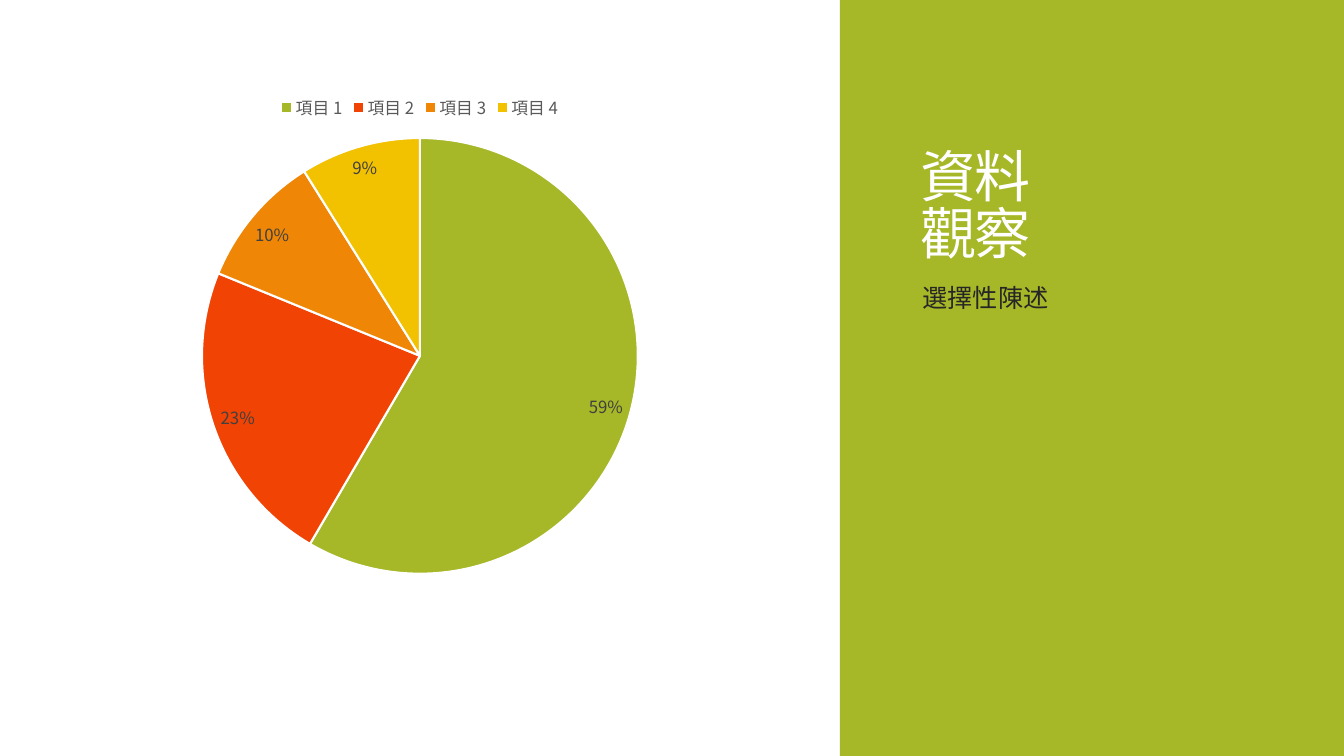
"""Build a slide with a pie chart beside a green title panel."""
from dataclasses import dataclass

from lxml.etree import Element
from pptx import Presentation
from pptx.chart.data import CategoryChartData
from pptx.dml.color import RGBColor
from pptx.enum.chart import XL_CHART_TYPE, XL_LABEL_POSITION, XL_LEGEND_POSITION
from pptx.enum.shapes import MSO_SHAPE
from pptx.enum.text import MSO_ANCHOR
from pptx.oxml.ns import qn
from pptx.slide import Slide
from pptx.text.text import Font
from pptx.util import Inches, Pt


@dataclass(frozen=True)
class Theme:
    """Colours, font and type sizes of the slide."""
    font: str = "Noto Sans CJK TC"
    panel: str = "A6B727"
    white: str = "FFFFFF"
    body: str = "262626"
    legend: str = "595959"
    label: str = "404040"
    title_size: float = 40
    body_size: float = 18
    chart_size: float = 12


@dataclass(frozen=True)
class Box:
    """A frame in inches."""
    left: float
    top: float
    width: float
    height: float

    def lengths(self) -> tuple[Inches, Inches, Inches, Inches]:
        """Return the frame as slide lengths."""
        return Inches(self.left), Inches(self.top), Inches(self.width), Inches(self.height)


@dataclass(frozen=True)
class TextBlock:
    """A text frame with one paragraph."""
    text: str
    box: Box
    size: float
    color: str
    anchor: MSO_ANCHOR
    line_spacing: float = 1.0
    space_before: float = 0
    tracking: int = 0


@dataclass(frozen=True)
class Slice:
    """One slice of the pie."""
    name: str
    share: int
    color: str


THEME = Theme()
PANEL = Box(8.33, 0, 5, 7.5)
CHART = Box(0.83, 0.83, 6.67, 5)
TEXTS = (
    TextBlock("資料\v觀察", Box(9.03, 0.59, 3.7, 2.1), THEME.title_size, THEME.white,
              MSO_ANCHOR.BOTTOM, line_spacing=0.85, tracking=-120),
    TextBlock("選擇性陳述", Box(9.05, 2.75, 3.72, 3.42), THEME.body_size, THEME.body,
              MSO_ANCHOR.TOP, space_before=12),
)
SLICES = (
    Slice("項目 1", 59, THEME.panel),
    Slice("項目 2", 23, "F04304"),
    Slice("項目 3", 10, "EF8606"),
    Slice("項目 4", 9, "F2C100"),
)


def style_font(font: Font, size: float, color: str) -> None:
    """Set the typeface, size and colour of a font."""
    font.name = THEME.font
    font.size = Pt(size)
    font.color.rgb = RGBColor.from_string(color)


def add_east_asian_font(root: Element) -> None:
    """Use the theme typeface for Chinese characters as well."""
    for latin in list(root.iter(qn("a:latin"))):
        east_asian = Element(qn("a:ea"))
        east_asian.set("typeface", THEME.font)
        latin.addnext(east_asian)


def add_panel(slide: Slide) -> None:
    """Draw the green panel."""
    panel = slide.shapes.add_shape(MSO_SHAPE.RECTANGLE, *PANEL.lengths())
    panel.shadow.inherit = False
    panel.fill.solid()
    panel.fill.fore_color.rgb = RGBColor.from_string(THEME.panel)
    panel.line.fill.background()


def add_text(slide: Slide, block: TextBlock) -> None:
    """Add one text block."""
    text_frame = slide.shapes.add_textbox(*block.box.lengths()).text_frame
    text_frame.word_wrap = True
    text_frame.vertical_anchor = block.anchor
    text_frame.text = block.text
    paragraph = text_frame.paragraphs[0]
    paragraph.line_spacing = block.line_spacing
    paragraph.space_before = Pt(block.space_before)
    for run in paragraph.runs:
        style_font(run.font, block.size, block.color)
        if block.tracking:
            run.font._element.set("spc", str(block.tracking))


def add_pie(slide: Slide) -> None:
    """Add the pie chart with its legend and labels."""
    data = CategoryChartData()
    data.categories = [item.name for item in SLICES]
    data.add_series("Series 1", [item.share for item in SLICES])
    chart = slide.shapes.add_chart(XL_CHART_TYPE.PIE, *CHART.lengths(), data).chart
    style_font(chart.font, THEME.chart_size, THEME.label)
    chart.has_title = False
    chart.has_legend = True
    chart.legend.position = XL_LEGEND_POSITION.TOP
    chart.legend.include_in_layout = False
    style_font(chart.legend.font, THEME.chart_size, THEME.legend)

    plot = chart.plots[0]
    plot.vary_by_categories = True
    plot.has_data_labels = True
    labels = plot.data_labels
    labels.show_percentage = False
    labels.show_value = True
    labels.number_format = '0"%"'
    labels.number_format_is_linked = False
    labels.position = XL_LABEL_POSITION.BEST_FIT
    style_font(labels.font, THEME.chart_size, THEME.label)

    for index, item in enumerate(SLICES):
        point_format = plot.series[0].points[index].format
        point_format.fill.solid()
        point_format.fill.fore_color.rgb = RGBColor.from_string(item.color)
        point_format.line.color.rgb = RGBColor.from_string(THEME.white)
        point_format.line.width = Pt(1.5)
    add_east_asian_font(chart.element)


def main() -> None:
    """Build and save the presentation."""
    presentation = Presentation()
    presentation.slide_width = Inches(13.33)
    presentation.slide_height = Inches(7.5)
    slide = presentation.slides.add_slide(presentation.slide_layouts[6])
    add_panel(slide)
    for block in TEXTS:
        add_text(slide, block)
    add_pie(slide)
    add_east_asian_font(slide.element)
    presentation.save("out.pptx")


if __name__ == "__main__":
    main()
